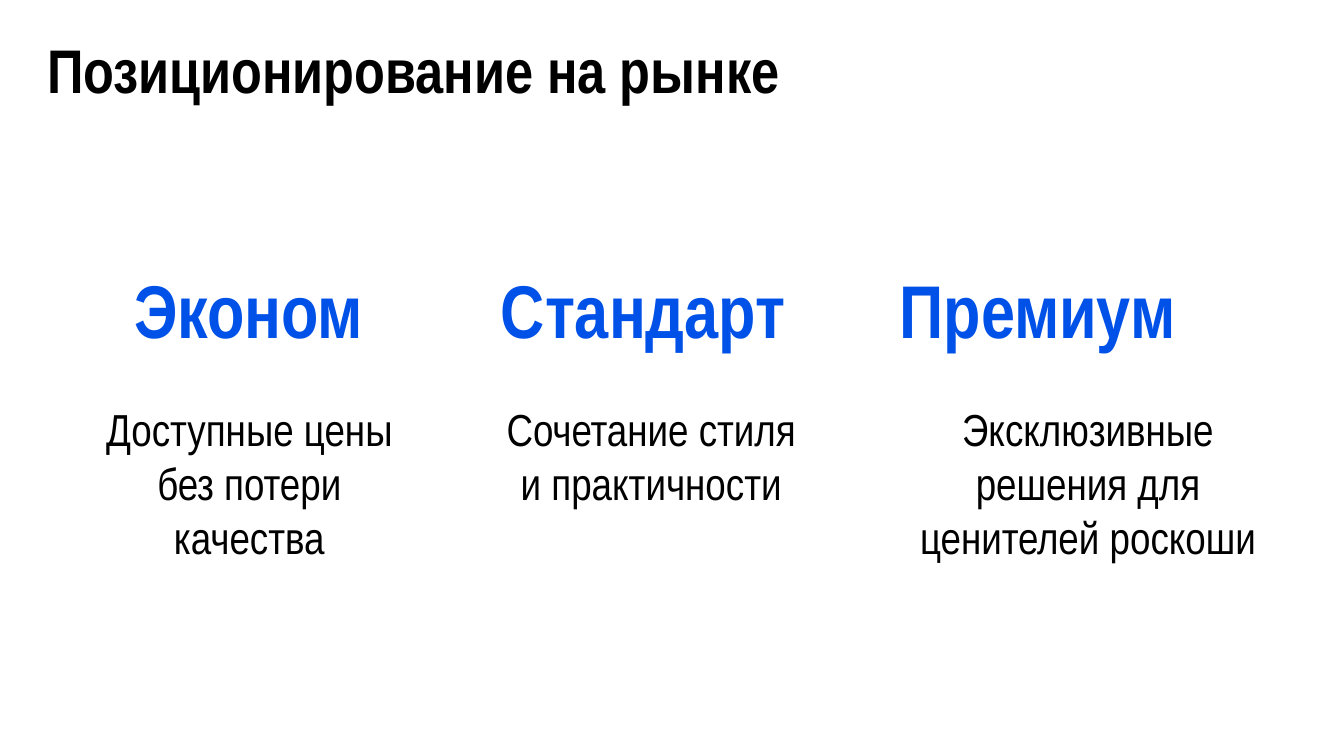
from pptx import Presentation
from pptx.dml.color import RGBColor
from pptx.enum.shapes import MSO_SHAPE
from pptx.enum.text import MSO_ANCHOR, PP_ALIGN
from pptx.util import Pt

PX = 4572  # EMU per px, 200 px to the inch
FONT = "Arial Narrow"
BLACK = RGBColor(0x00, 0x00, 0x00)
WHITE = RGBColor(0xFF, 0xFF, 0xFF)
BLUE = RGBColor(0x00, 0x51, 0xE8)

deck = Presentation()
deck.slide_width, deck.slide_height = 2000 * PX, 1125 * PX
slide = deck.slides.add_slide(deck.slide_layouts[6])


def add_text(text, left, top, width, height, *, size, color=BLACK, bold=False,
             align=PP_ALIGN.CENTER, anchor=MSO_ANCHOR.TOP, spacing=None, fill=None):
    box = [n * PX for n in (left, top, width, height)]
    if fill is None:
        holder = slide.shapes.add_textbox(*box)
    else:
        holder = slide.shapes.add_shape(MSO_SHAPE.RECTANGLE, *box)
        holder.shadow.inherit = False
        holder.fill.solid()
        holder.fill.fore_color.rgb = fill
        holder.line.fill.background()
    frame = holder.text_frame
    frame.word_wrap = True
    frame.vertical_anchor = anchor
    frame.margin_left = frame.margin_right = 14 * PX
    frame.margin_top = frame.margin_bottom = 8 * PX
    frame.text = text
    for paragraph in frame.paragraphs:
        paragraph.alignment = align
        paragraph.line_spacing = spacing
        for run in paragraph.runs:
            run.font.name = FONT
            run.font.size = Pt(size)
            run.font.bold = bold
            run.font.color.rgb = color


# Title
add_text("Позиционирование на рынке", 56, 52, 1724, 116, size=33, bold=True,
         align=PP_ALIGN.LEFT, anchor=MSO_ANCHOR.MIDDLE, spacing=0.9)

# Market tiers: name, description, and the description's left, width, height
tiers = [
    ("Эконом", "Доступные цены без потери качества", 112, 518, 206),
    ("Стандарт", "Сочетание стиля\nи практичности", 734, 470, 166),
    ("Премиум", "Эксклюзивные решения для ценителей роскоши", 1310, 618, 248),
]
TIER_LEFT, TIER_STEP = 126, 587
for column, (tier, description, left, width, height) in enumerate(tiers):
    add_text(tier, TIER_LEFT + column * TIER_STEP, 384, 488, 166, size=40,
             color=BLUE, bold=True, fill=WHITE)
    add_text(description, left, 590, width, height, size=24)

deck.save("out.pptx")
